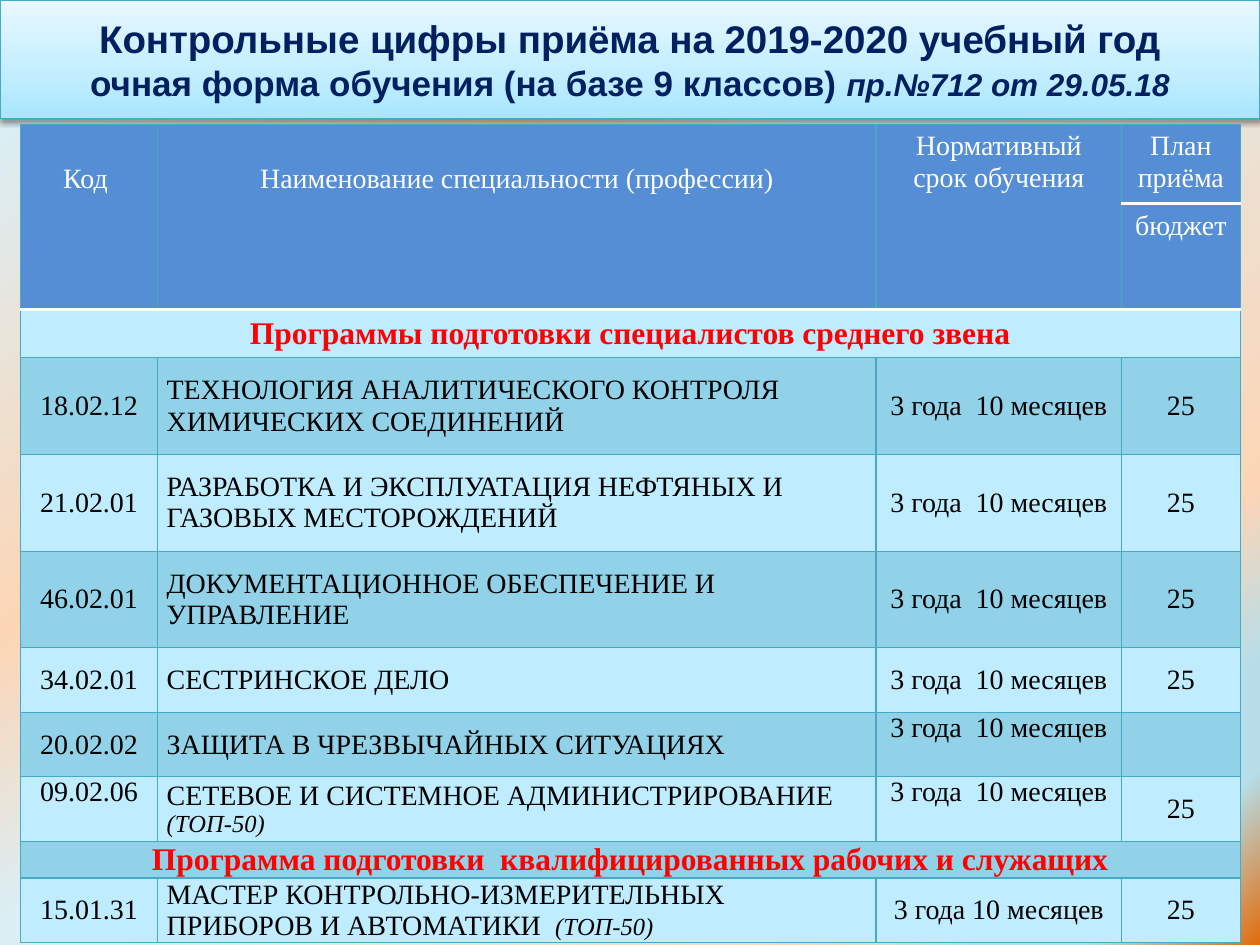
from lxml import etree
from pptx import Presentation
from pptx import util as u
from pptx.dml.color import RGBColor
from pptx.enum import text
from pptx.oxml import parse_xml
from pptx.oxml.ns import qn

NS = 'xmlns:a="http://schemas.openxmlformats.org/drawingml/2006/main"'
CENTER, LEFT = text.PP_ALIGN.CENTER, text.PP_ALIGN.LEFT
TOP, MIDDLE = text.MSO_ANCHOR.TOP, text.MSO_ANCHOR.MIDDLE


def rgb(value):
    return RGBColor.from_string(value)


def gradient(stops, direction):
    marks = "".join(
        f'<a:gs pos="{pos * 1000}"><a:srgbClr val="{color}"/></a:gs>'
        for pos, color in stops)
    return parse_xml(f'<a:gradFill {NS} rotWithShape="1"><a:gsLst>{marks}'
                     f'</a:gsLst>{direction}</a:gradFill>')


class Deck:
    title_font, body_font = "Arial", "Times New Roman"
    navy, white, black, red = "002060", "FFFFFF", "000000", "FF0000"
    header, light, dark, line = "558ED5", "BFECFF", "91D2E8", "46AAC5"

    def __init__(self):
        self.prs = Presentation()
        self.prs.slide_width, self.prs.slide_height = u.Cm(25.4), u.Cm(19.05)
        self.s = self.prs.slides.add_slide(self.prs.slide_layouts[5])

    def background(self, stops):
        self.s.background.fill.solid()
        props = self.s.element.find(".//" + qn("p:bgPr"))
        focus = ('<a:path path="circle">'
                 '<a:fillToRect l="100000" t="100000"/></a:path>')
        props.replace(props[0], gradient(stops, focus))

    def title(self, lines, height, stops):
        sp = self.s.shapes.title
        sp.left, sp.top = u.Cm(0), u.Cm(0)
        sp.width, sp.height = u.Cm(25.4), u.Cm(height)
        sp.fill.solid()
        sp.line.color.rgb, sp.line.width = rgb(self.line), u.Pt(0.75)
        props = sp.element.spPr
        props.replace(props.find(qn("a:solidFill")),
                      gradient(stops, '<a:lin ang="16200000" scaled="1"/>'))
        props.append(parse_xml(
            f'<a:effectLst {NS}><a:outerShdw blurRad="39400" dist="20300" '
            'dir="5400000" rotWithShape="0"><a:srgbClr val="000000">'
            '<a:alpha val="38000"/></a:srgbClr></a:outerShdw></a:effectLst>'))
        tf = sp.text_frame
        tf.word_wrap, tf.vertical_anchor = True, MIDDLE
        tf.auto_size = text.MSO_AUTO_SIZE.NONE
        p = tf.paragraphs[0]
        p.alignment = CENTER
        self.font(p.font, 22, self.navy, True, self.title_font)
        for i, runs in enumerate(lines):
            if i:
                p.add_line_break()
            self.runs(p, runs)

    def font(self, font, size, color, bold=False, name=body_font):
        font.name, font.size, font.bold = name, u.Pt(size), bold
        font.color.rgb = rgb(color)

    def runs(self, p, runs):
        for content, size, italic in runs:
            r = p.add_run()
            r.text, r.font.size, r.font.italic = content, u.Pt(size), italic

    def table(self, left, top, widths, heights):
        frame = self.s.shapes.add_table(
            len(heights), len(widths), u.Cm(left), u.Cm(top),
            u.Cm(sum(widths)), u.Cm(sum(heights)))
        tbl = frame.table
        tbl.first_row = tbl.horz_banding = False
        for column, width in zip(tbl.columns, widths):
            column.width = u.Cm(width)
        for row, height in zip(tbl.rows, heights):
            row.height = u.Cm(height)
        return tbl

    def border(self, cell, side, color, width):
        ln = etree.SubElement(cell._tc.get_or_add_tcPr(), qn(f"a:ln{side}"),
                              w=str(u.Pt(width)))
        fill = etree.SubElement(ln, qn("a:solidFill"))
        etree.SubElement(fill, qn("a:srgbClr"), val=color)

    def style_cell(self, cell, fill, white_sides):
        for side in "LRTB":
            if side in white_sides:
                self.border(cell, side, self.white, 2)
            else:
                self.border(cell, side, self.line, 0.75)
        cell.fill.solid()
        cell.fill.fore_color.rgb = rgb(fill)

    def cell_text(self, cell, runs, color=black, bold=False, align=CENTER,
                  anchor=MIDDLE, side=0.18, above=0):
        cell.margin_left = cell.margin_right = u.Cm(side)
        cell.margin_top, cell.margin_bottom = u.Cm(above), u.Cm(0)
        cell.vertical_anchor = anchor
        p = cell.text_frame.paragraphs[0]
        p.alignment = align
        self.font(p.font, runs[0][1], color, bold)
        self.runs(p, runs)


TERM = "3 года  10 месяцев"
TOP50 = "(ТОП-50)"
HEADERS = [("Код ", 0.78), ("Наименование специальности (профессии)", 0.78),
           ("Нормативный срок обучения", 0.13), ("План приёма", 0.13)]
SECTIONS = {2: ("Программы подготовки специалистов среднего звена", TOP, 0.13),
            9: ("Программа подготовки  квалифицированных рабочих и служащих",
                MIDDLE, 0)}
PROGRAMS = {
    3: ("18.02.12", "ТЕХНОЛОГИЯ АНАЛИТИЧЕСКОГО КОНТРОЛЯ ХИМИЧЕСКИХ СОЕДИНЕНИЙ",
        "", TERM, "25"),
    4: ("21.02.01",
        "РАЗРАБОТКА И ЭКСПЛУАТАЦИЯ НЕФТЯНЫХ И ГАЗОВЫХ МЕСТОРОЖДЕНИЙ",
        "", TERM, "25"),
    5: ("46.02.01", "ДОКУМЕНТАЦИОННОЕ ОБЕСПЕЧЕНИЕ И УПРАВЛЕНИЕ",
        "", TERM, "25"),
    6: ("34.02.01", "СЕСТРИНСКОЕ ДЕЛО", "", TERM, "25"),
    7: ("20.02.02", "ЗАЩИТА В ЧРЕЗВЫЧАЙНЫХ СИТУАЦИЯХ", "", TERM, ""),
    8: ("09.02.06", "СЕТЕВОЕ И СИСТЕМНОЕ АДМИНИСТРИРОВАНИЕ ", TOP50, TERM, "25"),
    10: ("15.01.31", "МАСТЕР КОНТРОЛЬНО-ИЗМЕРИТЕЛЬНЫХ ПРИБОРОВ И АВТОМАТИКИ  ",
         TOP50, "3 года 10 месяцев", "25"),
}
TOP_CELLS = {(7, 2), (8, 0), (8, 2)}
WHITE_SIDES = {(0, 3): "B", (1, 3): "TB"}


def main():
    deck = Deck()
    deck.background([
        (0, "E46C0A"), (8, "B7DEE8"), (13, "B7DEE8"), (21, "FCD5B5"),
        (52, "DBEEF4"), (58, "DBEEF4"), (71, "FCD5B5"), (94, "DBEEF4"),
        (100, "E46C0A")])
    deck.title(
        [[("Контрольные цифры приёма на 2019-2020 учебный год", 22, False)],
         [("очная форма обучения (на базе 9 классов) ", 20, False),
          ("пр.№712 от 29.05.18", 18, True)]],
        2.39, [(0, "A7E6FF"), (35, "C1EDFF"), (100, "E7F8FF")])

    heights = [1.6, 2.13, 0.97] + [1.95] * 3 + [1.3] * 3 + [0.74, 1.3]
    tbl = deck.table(0.41, 2.51, [2.77, 14.48, 4.95, 2.39], heights)
    for row in range(len(heights)):
        fill = deck.header if row < 2 else deck.dark if row % 2 else deck.light
        for col in range(4):
            sides = WHITE_SIDES.get((row, col), {1: "B", 2: "T"}.get(row, ""))
            deck.style_cell(tbl.cell(row, col), fill, sides)

    for col, (label, above) in enumerate(HEADERS):
        if col < 3:
            tbl.cell(0, col).merge(tbl.cell(1, col))
        deck.cell_text(tbl.cell(0, col), [(label, 16, False)], deck.white,
                       anchor=TOP, side=0.25, above=above)
    deck.cell_text(tbl.cell(1, 3), [("бюджет", 16, False)], deck.white,
                   anchor=TOP, above=0.13)

    for row, (label, anchor, above) in SECTIONS.items():
        tbl.cell(row, 0).merge(tbl.cell(row, 3))
        deck.cell_text(tbl.cell(row, 0), [(label, 18, False)], deck.red, True,
                       anchor=anchor, above=above)

    for row, (code, name, mark, term, places) in PROGRAMS.items():
        for col, label in enumerate((code, name, term, places)):
            runs = [(label, 16, False)]
            if col == 1 and mark:
                runs.append((mark, 14, True))
            deck.cell_text(tbl.cell(row, col), runs,
                           align=LEFT if col == 1 else CENTER,
                           anchor=TOP if (row, col) in TOP_CELLS else MIDDLE)

    deck.prs.save("out.pptx")


if __name__ == "__main__":
    main()
